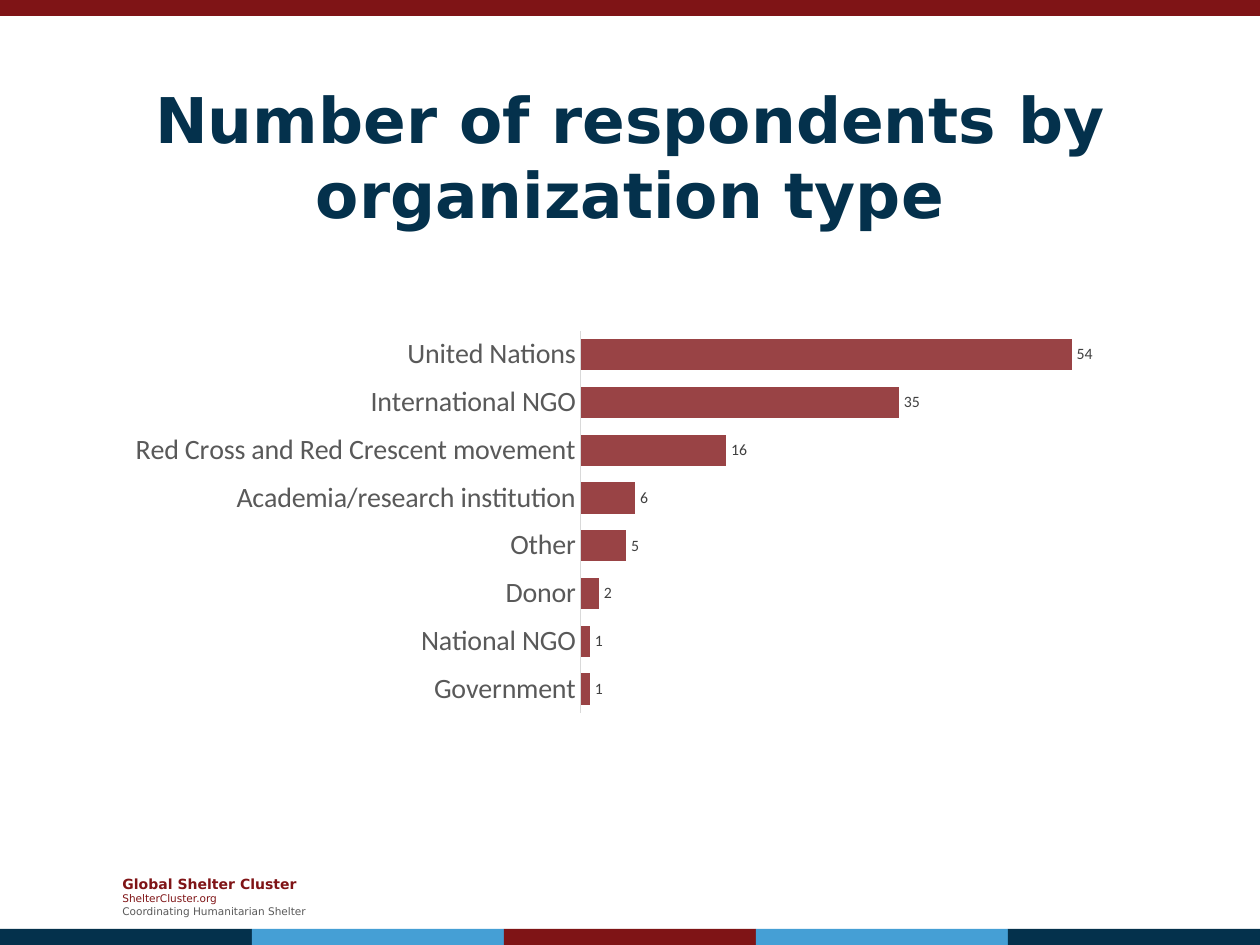
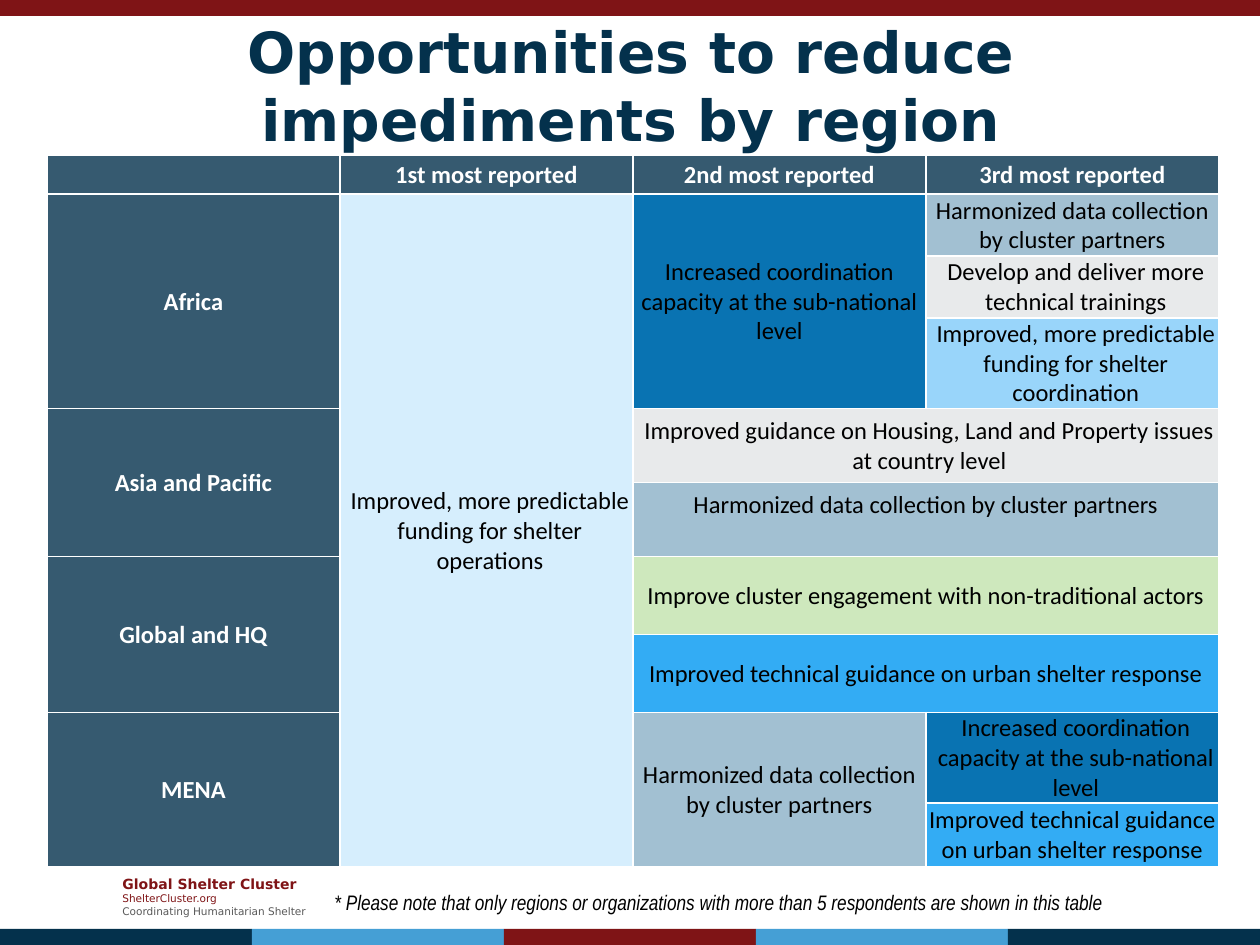
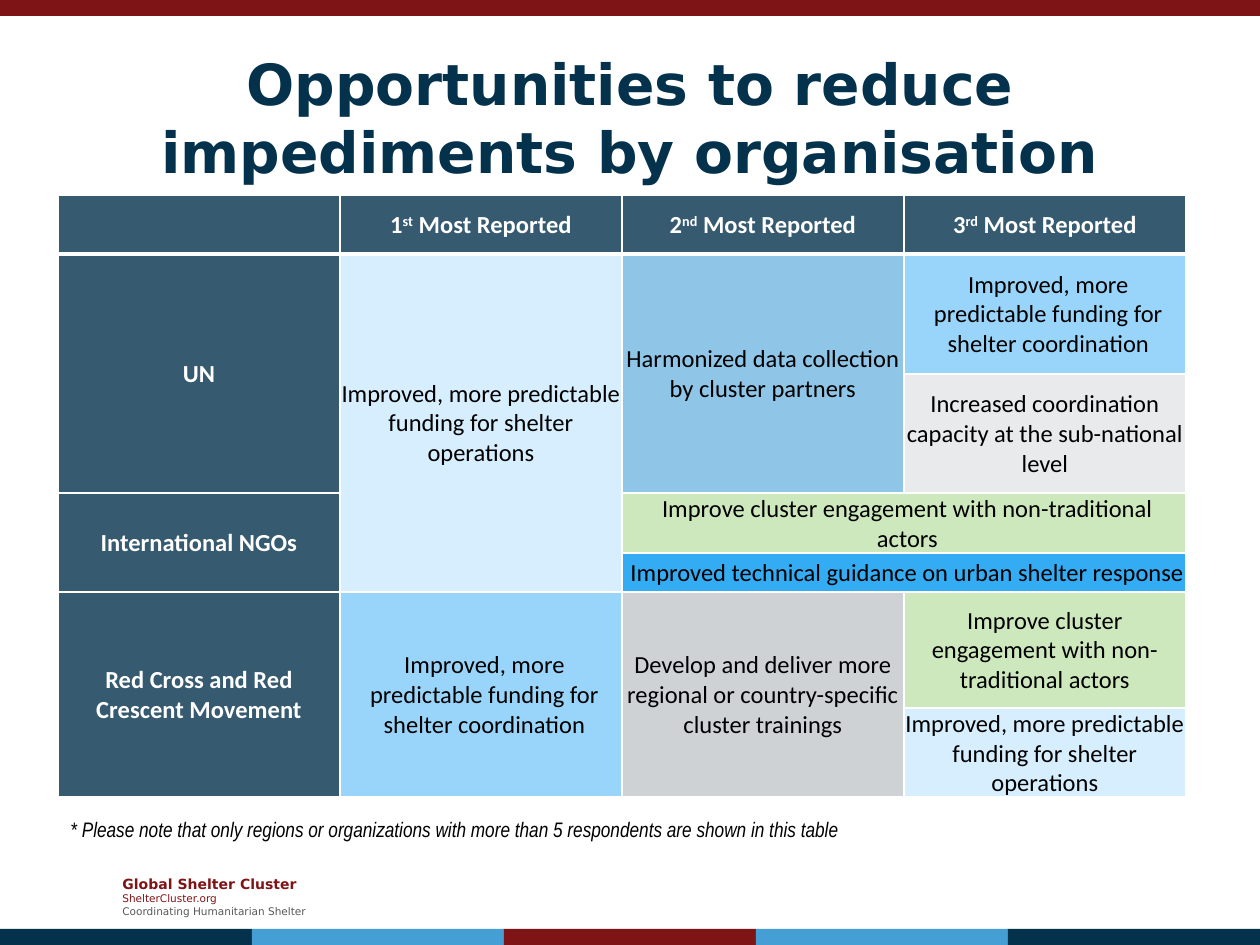
from lxml import etree
from pptx import Presentation
from pptx import util as u
from pptx.chart import data
from pptx.dml.color import RGBColor
from pptx.enum import chart as ch, shapes, text
from pptx.oxml import ns

SCALE = 914400 / 126
WIDE, HIGH = 1260, 945
HUES = {
    "red": "7F1416", "navy": "04314C", "blue": "459FD5", "gray": "595959",
    "black": "000000", "white": "FFFFFF", "label": "404040", "axis": "D9D9D9",
    "bar": "994345", "head": "365A70", "ice": "D6EEFD", "deep": "0973B2",
    "steel": "A2C0D2", "pale": "E8EAEB", "sky": "99D5FA", "green": "CEE8BD",
    "vivid": "33ACF4", "soft": "8FC5E6", "silver": "CED2D5",
}
BAND = 16
STRIPES = ["navy", "blue", "red", "blue", "navy"]
FOOTER = [("Global Shelter Cluster", 8, "red", True),
          ("ShelterCluster.org", 6, "red", False),
          ("Coordinating Humanitarian Shelter", 6, "gray", False)]
NOTE = ("* Please note that only regions or organizations with more than "
        "5 respondents are shown in this table")

TYPES = {
    "Government": 1, "National NGO": 1, "Donor": 2, "Other": 5,
    "Academia/research institution": 6,
    "Red Cross and Red Crescent movement": 16,
    "International NGO": 35, "United Nations": 54,
}

OPS = "Improved, more predictable funding for shelter operations"
COORD = "Improved, more predictable funding for shelter coordination"
DATA = "Harmonized data collection by cluster partners"
LOCAL = "Increased coordination capacity at the sub-national level"
URBAN = "Improved technical guidance on urban shelter response"
ACTORS = "Improve cluster engagement with non-traditional actors"
LEAD = {"margin_left": 8}
TAIL = {"margin_bottom": 30}

# Cells: row, column, rows spanned, columns spanned, fill, text, margins in px.
# Text between bars is superscript.
REGIONS = [
    (0, 0, 1, 1, "head", "", {}),
    (0, 1, 1, 1, "head", "1st most reported", {}),
    (0, 2, 1, 1, "head", "2nd most reported", {}),
    (0, 3, 1, 1, "head", "3rd most reported", {}),
    (1, 0, 3, 1, "head", "Africa", {}),
    (4, 0, 2, 1, "head", "Asia and Pacific", {}),
    (6, 0, 2, 1, "head", "Global and HQ", {}),
    (8, 0, 2, 1, "head", "MENA", {}),
    (1, 1, 9, 1, "ice", OPS, LEAD),
    (1, 2, 3, 1, "deep", LOCAL, {}),
    (1, 3, 1, 1, "steel", DATA, {}),
    (2, 3, 1, 1, "pale", "Develop and deliver more technical trainings", LEAD),
    (3, 3, 1, 1, "sky", COORD, LEAD),
    (4, 2, 1, 2, "pale", "Improved guidance on Housing, Land and Property "
     "issues at country level", LEAD),
    (5, 2, 1, 2, "steel", DATA, TAIL),
    (6, 2, 1, 2, "green", ACTORS, {}),
    (7, 2, 1, 2, "vivid", URBAN, {}),
    (8, 2, 2, 1, "steel", DATA, {}),
    (8, 3, 1, 1, "deep", LOCAL, LEAD),
    (9, 3, 1, 1, "vivid", URBAN, {}),
]
GROUPS = [
    (0, 0, 1, 1, "head", "", {}),
    (0, 1, 1, 1, "head", "1|st| Most Reported", {}),
    (0, 2, 1, 1, "head", "2|nd| Most Reported", {}),
    (0, 3, 1, 1, "head", "3|rd| Most Reported", {}),
    (1, 0, 2, 1, "head", "UN", {}),
    (3, 0, 2, 1, "head", "International NGOs", {}),
    (5, 0, 2, 1, "head", "Red Cross and Red Crescent Movement", {}),
    (1, 1, 4, 1, "ice", OPS, {}),
    (1, 2, 2, 1, "soft", DATA, {}),
    (1, 3, 1, 1, "sky", COORD, LEAD),
    (2, 3, 1, 1, "pale", LOCAL, {}),
    (3, 2, 1, 2, "green", ACTORS, LEAD),
    (4, 2, 1, 2, "vivid", URBAN, LEAD),
    (5, 1, 2, 1, "sky", COORD, LEAD),
    (5, 2, 2, 1, "silver", "Develop and deliver more regional or "
     "country-specific cluster trainings", {}),
    (5, 3, 1, 1, "green", ACTORS, {}),
    (6, 3, 1, 1, "ice", OPS, {}),
]


def px(n):
    return u.Emu(round(n * SCALE))


def place(box):
    return [px(n) for n in box]


def rgb(hue):
    return RGBColor.from_string(HUES[hue])


def put(item, **vals):
    for key, val in vals.items():
        setattr(item, key, val)


def style(font, size, hue, face="Calibri", **more):
    put(font, size=u.Pt(size), name=face, **more)
    font.color.rgb = rgb(hue)


def paint(item, hue):
    item.fill.solid()
    item.fill.fore_color.rgb = rgb(hue)


def strip(slide, box, hue):
    bar = slide.shapes.add_shape(shapes.MSO_SHAPE.RECTANGLE, *place(box))
    bar.shadow.inherit = False
    paint(bar, hue)
    bar.line.fill.background()
    return bar


def footer(slide, box):
    area = slide.shapes.add_textbox(*place(box))
    frame = area.text_frame
    put(frame, word_wrap=True, vertical_anchor=text.MSO_ANCHOR.MIDDLE,
        auto_size=text.MSO_AUTO_SIZE.SHAPE_TO_FIT_TEXT)
    for i, (line, size, hue, bold) in enumerate(FOOTER):
        para = frame.add_paragraph() if i else frame.paragraphs[0]
        run = para.add_run()
        run.text = line
        style(run.font, size, hue, "DejaVu Sans", bold=bold)
    return area


def brand(deck, slide):
    """Draw the shared bands and footer, then move them to the master."""
    step = WIDE // len(STRIPES)
    parts = [footer(slide, (110, 869, 218, 55)),
             strip(slide, (0, 0, WIDE, BAND), "red")]
    parts += [strip(slide, (i * step, HIGH - BAND, step, BAND), hue)
              for i, hue in enumerate(STRIPES)]
    for part in parts:
        deck.slide_master.shapes.element.append(part.element)


def title(slide, box, words, size):
    head = slide.shapes.title
    left, top, width, height = place(box)
    put(head, left=left, top=top, width=width, height=height)
    frame = head.text_frame
    frame.text = words
    put(frame, auto_size=text.MSO_AUTO_SIZE.NONE, word_wrap=True,
        vertical_anchor=text.MSO_ANCHOR.MIDDLE)
    para = frame.paragraphs[0]
    para.alignment = text.PP_ALIGN.CENTER
    style(para.runs[0].font, size, "navy", "DejaVu Sans", bold=True)


def note(slide, box):
    frame = slide.shapes.add_textbox(*place(box)).text_frame
    frame.word_wrap = True
    para = frame.paragraphs[0]
    put(para, alignment=text.PP_ALIGN.JUSTIFY, line_spacing=1.15,
        space_after=u.Pt(10))
    run = para.add_run()
    run.text = NOTE
    style(run.font, 12, "black", "Arial Narrow", italic=True)


def bars(slide, box, counts):
    info = data.CategoryChartData()
    info.categories = list(counts)
    info.add_series("Series 1", list(counts.values()))
    chart = slide.shapes.add_chart(
        ch.XL_CHART_TYPE.BAR_CLUSTERED, *place(box), info).chart
    put(chart, has_legend=False, has_title=False)
    style(chart.font, 10, "black")
    put(chart.value_axis, visible=False, has_major_gridlines=False,
        minimum_scale=0, maximum_scale=60)
    axis = chart.category_axis
    put(axis, major_tick_mark=ch.XL_TICK_MARK.NONE,
        has_major_gridlines=False)
    style(axis.tick_labels.font, 16, "gray")
    axis.format.line.color.rgb = rgb("axis")
    axis.format.line.width = u.Pt(0.75)
    plot = chart.plots[0]
    put(plot, gap_width=52, vary_by_categories=False, has_data_labels=True)
    paint(plot.series[0].format, "bar")
    put(plot.data_labels, show_value=True,
        position=ch.XL_LABEL_POSITION.OUTSIDE_END)
    style(plot.data_labels.font, 9, "label")


def border(cell, base):
    """Give a cell white edges, the bottom one base points wide."""
    props = cell._tc.get_or_add_tcPr()
    for i, side in enumerate("LRTB"):
        width = base if side == "B" else 1
        line = etree.Element(ns.qn(f"a:ln{side}"), w=str(u.Pt(width)))
        fill = etree.SubElement(line, ns.qn("a:solidFill"))
        etree.SubElement(fill, ns.qn("a:srgbClr"), val=HUES["white"])
        props.insert(i, line)


def write(cell, words, fill, more):
    paint(cell, fill)
    edges = {"margin_left": 1, "margin_top": 1, "margin_right": 1,
             "margin_bottom": 0, **more}
    put(cell, vertical_anchor=text.MSO_ANCHOR.MIDDLE,
        **{key: px(n) for key, n in edges.items()})
    para = cell.text_frame.paragraphs[0]
    para.alignment = text.PP_ALIGN.CENTER
    head = fill == "head"
    for i, piece in enumerate(words.split("|")):
        run = para.add_run()
        run.text = piece
        style(run.font, 14, "white" if head else "black", bold=head)
        if i % 2:
            run._r.get_or_add_rPr().set("baseline", "30000")


def grid(slide, spot, width, rows, cells, rule=1):
    """Build a four-column table; rule is the line under its header."""
    cols = 4
    box = (*spot, width * cols, sum(rows))
    table = slide.shapes.add_table(len(rows), cols, *place(box)).table
    put(table, first_row=False, horz_banding=False)
    for col in table.columns:
        col.width = px(width)
    for r, height in enumerate(rows):
        table.rows[r].height = px(height)
        for c in range(cols):
            border(table.cell(r, c), 1 if r else rule)
    for r, c, down, across, fill, words, more in cells:
        cell = table.cell(r, c)
        if down * across > 1:
            cell.merge(table.cell(r + down - 1, c + across - 1))
        write(cell, words, fill, more)


def main():
    deck = Presentation()
    put(deck, slide_width=px(WIDE), slide_height=px(HIGH))
    first, second, third = [deck.slides.add_slide(deck.slide_layouts[5])
                            for _ in range(3)]
    brand(deck, first)

    title(first, (63, 38, 1134, 236),
          "Number of respondents by organization type", 36)
    bars(first, (115, 323, 1032, 398), TYPES)

    title(second, (64, 6, 1134, 158),
          "Opportunities to reduce impediments by region", 32.4)
    grid(second, (47, 155), 293,
         [39, 62, 62, 90, 74, 74, 78, 78, 90, 64], REGIONS)
    note(second, (322, 880, 930, 42))

    title(third, (63, 38, 1134, 158),
          "Opportunities to reduce impediments by organisation", 32.4)
    note(third, (58, 807, 930, 42))
    grid(third, (58, 195), 282, [59, 120, 119, 60, 39, 116, 89], GROUPS, 3)

    deck.save("out.pptx")


if __name__ == "__main__":
    main()
